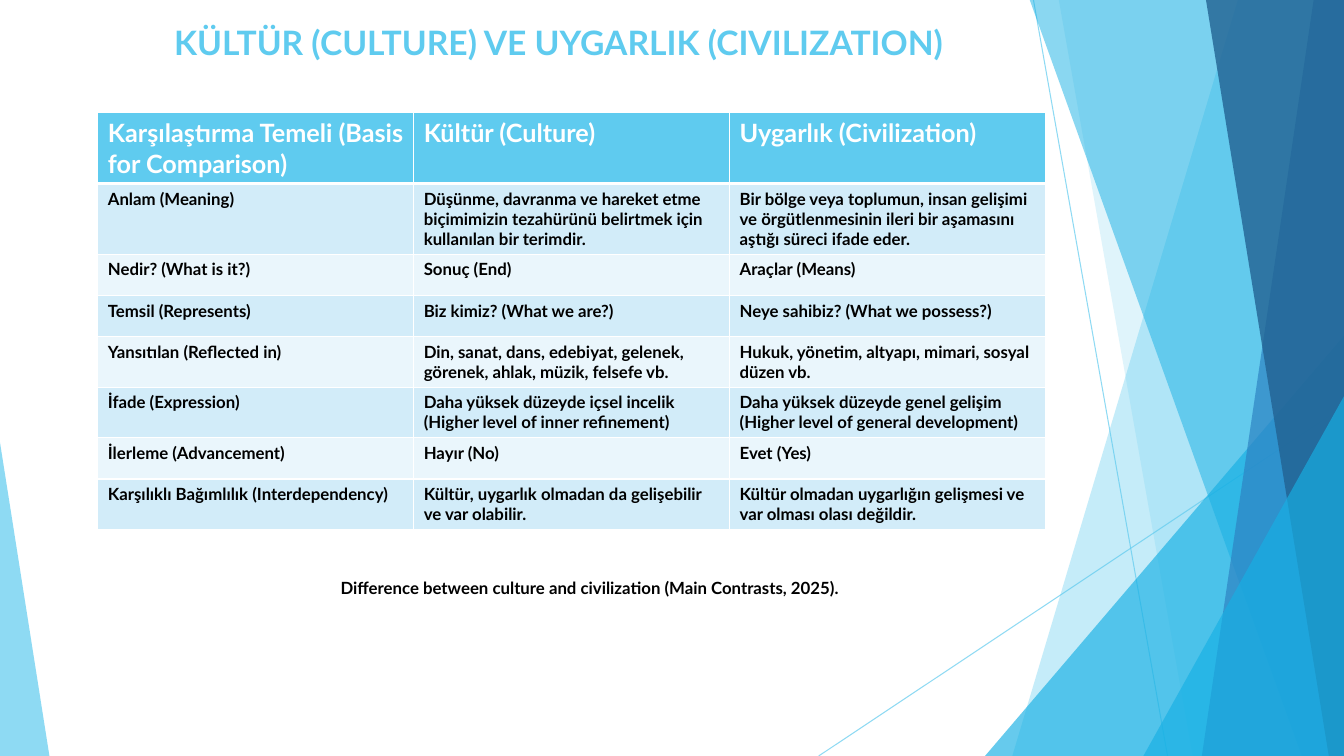
import pptx
import pptx.dml.color
import pptx.enum.shapes
import pptx.enum.text
import pptx.oxml
import pptx.oxml.ns
import pptx.util

Inches = pptx.util.Inches
Pt = pptx.util.Pt
qn = pptx.oxml.ns.qn

SKY, CYAN, BLUE, NAVY = "5FCBEF", "17B0E4", "2E83C3", "226292"
WHITE, BLACK = "FFFFFF", "000000"
BANDS = ["EAF6FC", "D2ECF9"]
TOP, BOTTOM, RIGHT = -0.01, 7.5, 13.33

LINES = [((10.25, 0), (11.58, 7.5)), ((13.33, 4.03), (8.12, 7.5))]
TRIANGLE_BEHIND = (9.77, 3.33, 3.56, 4.17, 1, CYAN, 66)
TRIANGLES_FRONT = [
    (11.34, 3.93, 1.99, 3.57, 1, CYAN, 66),
    (0, 4.39, 0.49, 3.11, 0, SKY, 70),
]
PANELS_BEHIND = [(12.28, 10.04, SKY, 36), (10.5, 11.83, SKY, 20)]
PANELS_FRONT = [
    (10.21, 12.91, CYAN, 50),
    (13.03, 11.92, BLUE, 70),
    (11.96, 13.18, NAVY, 80),
]

COMPARISON = [
    ["Karşılaştırma Temeli (Basis for Comparison)", "Kültür (Culture)", "Uygarlık (Civilization)"],
    ["Anlam (Meaning)",
     "Düşünme, davranma ve hareket etme biçimimizin tezahürünü belirtmek için kullanılan bir terimdir.",
     "Bir bölge veya toplumun, insan gelişimi ve örgütlenmesinin ileri bir aşamasını aştığı süreci ifade eder."],
    ["Nedir? (What is it?)", "Sonuç (End)", "Araçlar (Means)"],
    ["Temsil (Represents)", "Biz kimiz? (What we are?)", "Neye sahibiz? (What we possess?)"],
    ["Yansıtılan (Reflected in)",
     "Din, sanat, dans, edebiyat, gelenek, görenek, ahlak, müzik, felsefe vb.",
     "Hukuk, yönetim, altyapı, mimari, sosyal düzen vb."],
    ["İfade (Expression)",
     "Daha yüksek düzeyde içsel incelik (Higher level of inner refinement)",
     "Daha yüksek düzeyde genel gelişim (Higher level of general development)"],
    ["İlerleme (Advancement)", "Hayır (No)", "Evet (Yes)"],
    ["Karşılıklı Bağımlılık (Interdependency)",
     "Kültür, uygarlık olmadan da gelişebilir ve var olabilir.",
     "Kültür olmadan uygarlığın gelişmesi ve var olması olası değildir."],
]


def color(hex_string):
    return pptx.dml.color.RGBColor.from_string(hex_string)


class SlideBuilder:
    """Draws styled elements on one slide."""

    font = "Lato"

    def __init__(self, slide):
        self.slide = slide
        self.shapes = slide.shapes

    def set_text(self, text_frame, text, size, hex_string):
        text_frame.text = text
        for run in text_frame.paragraphs[0].runs:
            run.font.name = self.font
            run.font.size = Pt(size)
            run.font.bold = True
            run.font.color.rgb = color(hex_string)

    def set_opacity(self, shape, percent):
        for element in shape._element.spPr.iter(qn("a:srgbClr")):
            alpha = element.makeelement(qn("a:alpha"), {"val": str(percent * 1000)})
            element.append(alpha)

    def paint(self, shape, hex_string, opacity):
        shape.shadow.inherit = False
        shape.fill.solid()
        shape.fill.fore_color.rgb = color(hex_string)
        shape.line.fill.background()
        self.set_opacity(shape, opacity)

    def line(self, start, end):
        connector = self.shapes.add_connector(
            pptx.enum.shapes.MSO_CONNECTOR.STRAIGHT, *map(Inches, start + end))
        connector.line.color.rgb = color(SKY)
        connector.line.width = Pt(0.75)
        self.set_opacity(connector, 70)
        properties = connector._element.spPr
        properties.append(properties.makeelement(qn("a:effectLst"), {}))

    def panel(self, top_left, bottom_left, hex_string, opacity):
        corners = [(top_left, TOP), (RIGHT, TOP), (RIGHT, BOTTOM), (bottom_left, BOTTOM)]
        points = [(Inches(x), Inches(y)) for x, y in corners]
        builder = self.shapes.build_freeform(*points[0])
        builder.add_line_segments(points[1:], close=True)
        self.paint(builder.convert_to_shape(), hex_string, opacity)

    def triangle(self, left, top, width, height, apex, hex_string, opacity):
        shape = self.shapes.add_shape(
            pptx.enum.shapes.MSO_SHAPE.ISOSCELES_TRIANGLE,
            *map(Inches, (left, top, width, height)))
        shape.adjustments[0] = apex
        self.paint(shape, hex_string, opacity)

    def title(self, text, left, top, width, height):
        title = self.shapes.title
        title.left, title.top, title.width, title.height = map(Inches, (left, top, width, height))
        self.set_text(title.text_frame, text, 24, SKY)
        title.text_frame.vertical_anchor = pptx.enum.text.MSO_ANCHOR.TOP
        title.text_frame.paragraphs[0].alignment = pptx.enum.text.PP_ALIGN.CENTER

    def caption(self, text, left, top, width, height):
        box = self.shapes.add_textbox(*map(Inches, (left, top, width, height)))
        box.text_frame.word_wrap = True
        self.set_text(box.text_frame, text, 12, BLACK)

    def borders(self, cell, bottom_width, top_width):
        properties = cell._tc.get_or_add_tcPr()
        for side, width in (("L", 1), ("R", 1), ("T", top_width), ("B", bottom_width)):
            properties.append(pptx.oxml.parse_xml(
                f'<a:ln{side} xmlns:a="http://schemas.openxmlformats.org/drawingml/2006/main" '
                f'w="{Pt(width)}"><a:solidFill><a:srgbClr val="{WHITE}"/></a:solidFill></a:ln{side}>'))

    def table(self, rows, left, top, width, row_height):
        frame = self.shapes.add_table(
            len(rows), len(rows[0]),
            *map(Inches, (left, top, width, row_height * len(rows))))
        for row in frame.table.rows:
            row.height = Inches(row_height)
        for row_index, row in enumerate(rows):
            header = row_index == 0
            for column_index, text in enumerate(row):
                cell = frame.table.cell(row_index, column_index)
                self.borders(cell, 3 if header else 1, 3 if row_index == 1 else 1)
                cell.fill.solid()
                cell.fill.fore_color.rgb = color(SKY if header else BANDS[row_index % 2])
                self.set_text(cell.text_frame, text, 18 if header else 12, WHITE if header else BLACK)


def main():
    presentation = pptx.Presentation()
    presentation.slide_width = Inches(13.33)
    presentation.slide_height = Inches(7.5)
    builder = SlideBuilder(presentation.slides.add_slide(presentation.slide_layouts[5]))
    for start, end in LINES:
        builder.line(start, end)
    for panel in PANELS_BEHIND:
        builder.panel(*panel)
    builder.triangle(*TRIANGLE_BEHIND)
    for panel in PANELS_FRONT:
        builder.panel(*panel)
    for triangle in TRIANGLES_FRONT:
        builder.triangle(*triangle)
    builder.title("KÜLTÜR (CULTURE) VE UYGARLIK (CIVILIZATION)", 0.84, 0.17, 9.4, 0.69)
    builder.table(COMPARISON, 0.97, 1.12, 9.4, 0.41)
    builder.caption("Difference between culture and civilization (Main Contrasts, 2025).",
                    3.28, 5.68, 5.63, 0.3)
    presentation.save("out.pptx")


if __name__ == "__main__":
    main()
